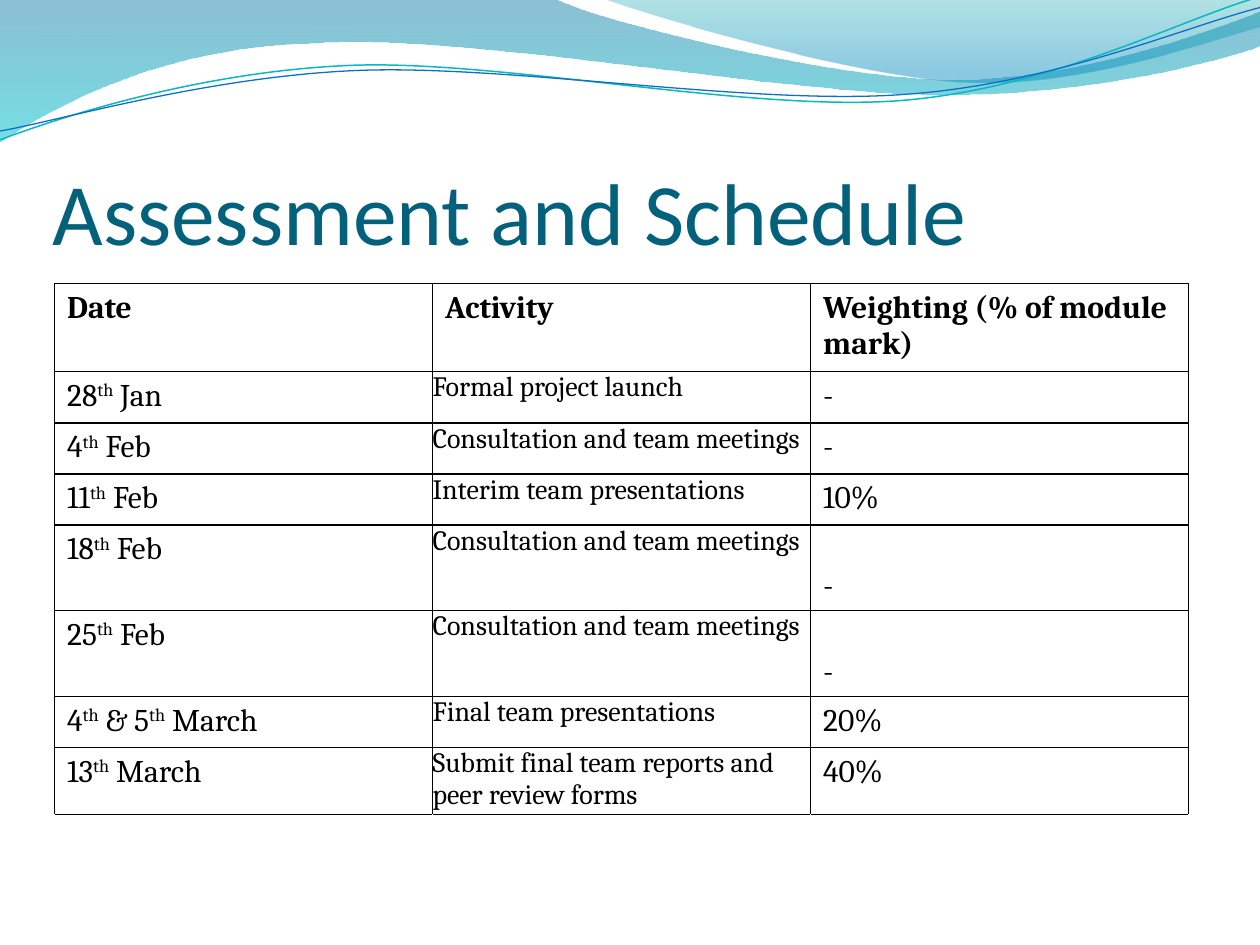
from itertools import chain, islice
from lxml.etree import SubElement
from pptx import Presentation
from pptx.dml.color import RGBColor
from pptx.enum.text import MSO_ANCHOR as Anchor
from pptx.oxml.ns import qn
from pptx.util import Inches, Pt

BLACK = RGBColor(0x00, 0x00, 0x00)
WHITE = RGBColor(0xFF, 0xFF, 0xFF)
TITLE = RGBColor(0x04, 0x61, 0x7B)
BLUE = RGBColor(0x00, 0x74, 0xA1)
CYAN = RGBColor(0x00, 0xC6, 0xCF)
TEAL = RGBColor(0x00, 0xA1, 0xA9)
SKY = RGBColor(0x00, 0x8B, 0xBF)
TEAL_LINE = RGBColor(0x0A, 0xB8, 0xBF)
BLUE_LINE = RGBColor(0x0F, 0x6F, 0xC6)

FILLED_WAVES = [
    ([[(0, 0)], [(4.4, -0.01)],
      [(4.76, 0.17), (6.64, 0.63), (7.58, 0.63)],
      [(8.53, 0.63), (9.58, 0.26), (10, 0.09)], [(10.01, 0.36)],
      [(9.83, 0.44), (8.7, 0.76), (7.46, 0.75)],
      [(6.22, 0.75), (3.82, 0.28), (2.57, 0.34)],
      [(1.29, 0.36), (0.46, 0.83), (-0.01, 1.13)], [(0, 0)]],
     [(0, BLUE, 45), (1, CYAN, 55)]),
    ([[(4.79, -0.01)],
      [(5.09, 0.11), (6.82, 0.62), (7.69, 0.65)],
      [(8.56, 0.69), (9.61, 0.32), (10, 0.21)], [(10, 0)], [(4.79, -0.01)]],
     [(0, TEAL, 30), (0.8, SKY, 45)]),
]
LINE_WAVES = [
    ([[(0, 1.11)], [(0.48, 0.93), (1.58, 0.57), (2.77, 0.52)],
      [(3.95, 0.47), (5.93, 0.89), (7.13, 0.8)],
      [(8.33, 0.71), (9.38, 0.15), (9.98, -0.02)]], TEAL_LINE, 0.85),
    ([[(0, 1.04)], [(0.47, 0.96), (1.64, 0.61), (2.83, 0.56)],
      [(4.03, 0.51), (5.97, 0.84), (7.17, 0.75)],
      [(8.36, 0.67), (9.41, 0.21), (10, 0.06)]], BLUE_LINE, 0.75),
]
MEETING = "Consultation and team meetings"
ROW = Pt(29.2)
TALL_ROW = Inches(0.68)
SCHEDULE = [
    ("Date", "Activity", "Weighting (% of module mark)", ROW),
    ("28^th^ Jan", "Formal project launch", "-", ROW),
    ("4^th^ Feb", MEETING, "-", ROW),
    ("11^th^ Feb", "Interim team presentations", "10%", ROW),
    ("18^th^ Feb", MEETING, "-", TALL_ROW),
    ("25^th^ Feb", MEETING, "-", TALL_ROW),
    ("4^th^ & 5^th^ March", "Final team presentations", "20%", ROW),
    ("13^th^ March", "Submit final team reports and peer review forms", "40%", ROW),
    ("", "", "", ROW),
]


def set_all(obj, values):
    """Set every attribute in the dict."""
    for name, value in values.items():
        setattr(obj, name, value)


def bend(sp, segments):
    """Merge each run of three line segments into one cubic curve."""
    lines = iter(list(sp._element.iter(qn("a:lnTo"))))
    for seg in segments[1:]:
        group = list(islice(lines, len(seg)))
        if len(group) == 3:
            curve = group[0].makeelement(qn("a:cubicBezTo"))
            group[0].addprevious(curve)
            for line in group:
                curve.append(line[0])
                line.getparent().remove(line)


def add_wave(s, box, segments, close):
    """Draw one wave on a grid of ten units across the box."""
    x, y, w, _ = box
    points = [(x + px * w / 10, y + py * w / 10)
              for px, py in chain.from_iterable(segments)]
    builder = s.shapes.build_freeform(*points[0])
    builder.add_line_segments(points[1:], close=close)
    sp = builder.convert_to_shape()
    bend(sp, segments)
    sp.shadow.inherit = False
    return sp


def add_waves(s, box):
    """Draw the filled and outlined waves along the top of the box."""
    for segments, stops in FILLED_WAVES:
        sp = add_wave(s, box, segments, True)
        sp.line.fill.background()
        sp.fill.gradient()
        sp.fill.gradient_angle = 270
        for stop, (position, color, _) in zip(sp.fill.gradient_stops, stops):
            stop.position = position
            stop.color.rgb = color
        for node, (_, _, opacity) in zip(sp._element.spPr.iter(qn("a:srgbClr")), stops):
            SubElement(node, qn("a:alpha"), val=str(opacity * 1000))
    for segments, color, width in LINE_WAVES:
        sp = add_wave(s, box, segments, False)
        sp.fill.background()
        sp.line.color.rgb = color
        sp.line.width = Pt(width)


def add_text(p, text, color, font):
    """Write text whose parts between carets are superscript."""
    for i, part in enumerate(text.split("^")):
        r = p.add_run()
        r.text = part
        set_all(r.font, font)
        r.font.color.rgb = color
        if i % 2:
            r.font._element.set("baseline", "30000")


def add_title(s, box, text):
    """Place the slide title at the bottom of its box."""
    tf = s.shapes.add_textbox(*box).text_frame
    set_all(tf, {"word_wrap": True, "vertical_anchor": Anchor.BOTTOM, "margin_left": 0,
                 "margin_top": Inches(0.05), "margin_right": 0, "margin_bottom": 0})
    add_text(tf.paragraphs[0], text, TITLE, {"size": Pt(50), "name": "Calibri"})


def set_borders(cell, colors):
    """Give the cell 1 pt left, right, top and bottom borders."""
    for side, color in zip("LRTB", colors):
        ln = SubElement(cell._tc.get_or_add_tcPr(), qn(f"a:ln{side}"), w=str(Pt(1)))
        SubElement(SubElement(ln, qn("a:solidFill")), qn("a:srgbClr"), val=str(color))


def add_schedule(s, box):
    """Fill the box with the schedule table and its open last row."""
    last = len(SCHEDULE) - 1
    frame = s.shapes.add_table(len(SCHEDULE), 3, *box)
    table = frame.table
    set_all(table, {"first_row": False, "horz_banding": False})
    for i, (*texts, height) in enumerate(SCHEDULE):
        table.rows[i].height = height
        for j, text in enumerate(texts):
            cell = table.cell(i, j)
            edge = WHITE if i == last else BLACK
            set_borders(cell, (edge, edge, BLACK, edge))
            cell.fill.solid()
            cell.fill.fore_color.rgb = WHITE
            activity = j == 1 and 0 < i < last
            if activity:
                set_all(cell, dict.fromkeys(
                    ("margin_left", "margin_top", "margin_right", "margin_bottom"), 0))
            if text == "-" and height == TALL_ROW:
                cell.vertical_anchor = Anchor.BOTTOM
            if text:
                add_text(cell.text_frame.paragraphs[0], text, BLACK,
                         {"size": Pt(16 if activity else 18),
                          "name": "Cambria", "bold": i == 0})
    frame.height = box[3]


def main():
    """Build and save the slide."""
    prs = Presentation()
    set_all(prs, {"slide_width": Inches(10), "slide_height": Inches(7.5)})
    w, h = prs.slide_width, prs.slide_height
    s = prs.slides.add_slide(prs.slide_layouts[6])
    add_waves(s, (0, 0, w, h))
    add_title(s, (w // 24, h // 9, w * 9 // 10, h // 6), "Assessment and Schedule")
    add_schedule(s, (w * 13 // 300, h * 3 // 10, w * 9 // 10, h * 13 // 20))
    prs.save("out.pptx")


if __name__ == "__main__":
    main()
